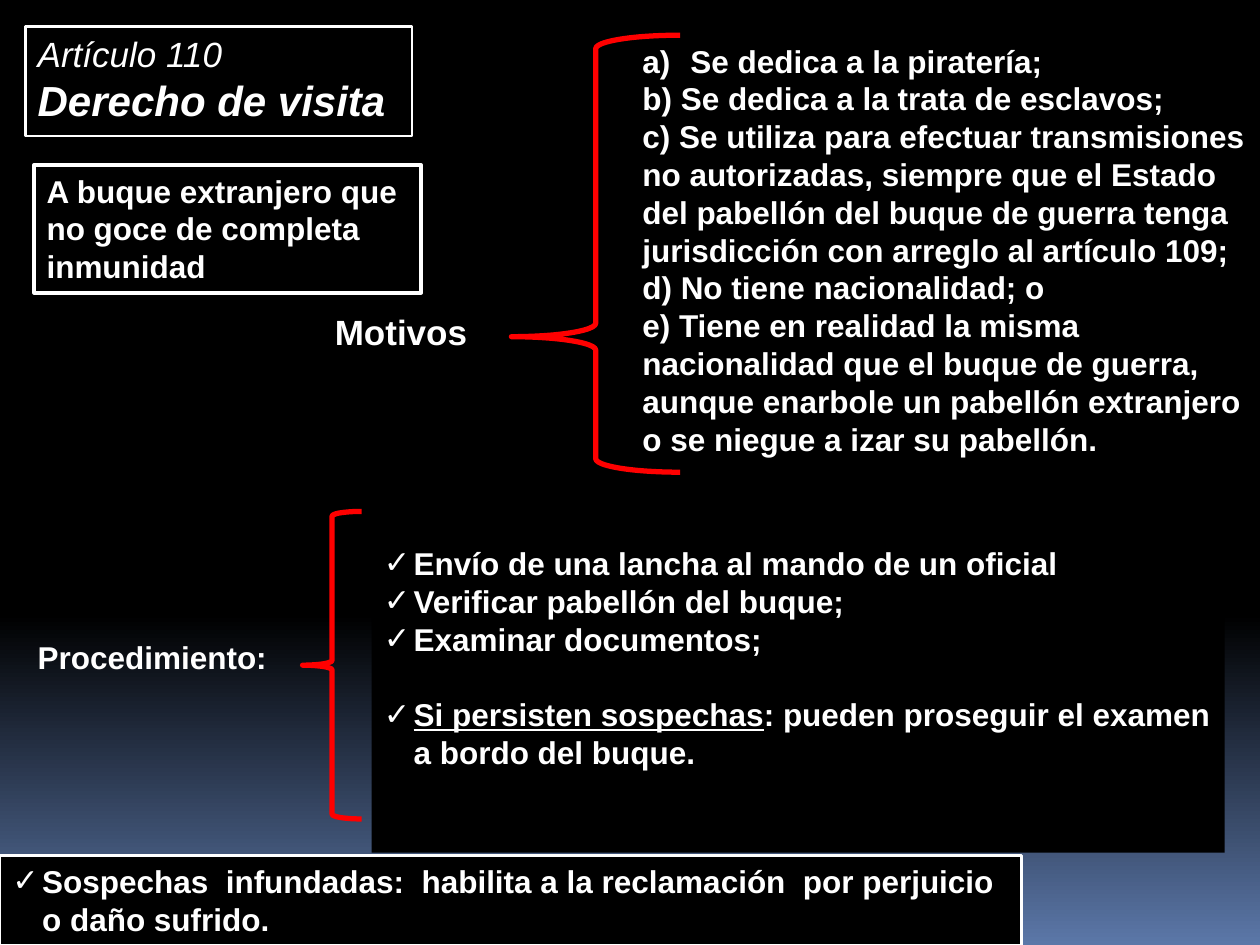
"""Slide on the right of visit, article 110."""
from copy import deepcopy

from lxml.etree import SubElement
from pptx import Presentation
from pptx.dml.color import RGBColor
from pptx.enum.shapes import MSO_SHAPE
from pptx.enum.text import MSO_ANCHOR, PP_ALIGN
from pptx.oxml.ns import qn
from pptx.util import Cm, Pt

BLACK = RGBColor(0x00, 0x00, 0x00)
WHITE = RGBColor(0xFF, 0xFF, 0xFF)
RED = RGBColor(0xFF, 0x00, 0x00)
BLUE = RGBColor(0x5B, 0x77, 0xA8)

FONT = "Arial"
BACKGROUND = [(0, BLACK), (0.65, BLACK), (1, BLUE)]
CHECK = {"tag": "a:buChar", "attribute": ("char", "✓"), "margin": 0.6, "hanging": True}
LETTER = {"tag": "a:buAutoNum", "attribute": ("type", "alphaLcParenR"), "margin": 0.97, "hanging": True}
CONTINUED = {"margin": 0.6}

BOXES = [
    {"at": (0.51, 0.53, 7.8, 2.21), "border": 1.5, "paragraphs": [
        {"runs": [("Artículo 110", {"size": 20, "bold": False, "italic": True})]},
        {"runs": [("Derecho de visita", {"size": 24, "italic": True})]},
    ]},
    {"at": (6.5, 6.12, 6.6, 1.12), "paragraphs": [
        {"runs": [("Motivos", {"size": 20})]},
    ]},
    {"at": (0.51, 12.73, 5.41, 1.02), "paragraphs": [
        {"runs": [("Procedimiento:", {})]},
    ]},
    {"at": (7.49, 9.32, 17.2, 7.87), "fill": BLACK, "top": 1.65, "paragraphs": [
        {"list": CHECK, "runs": [("Envío de una lancha al mando de un oficial", {})]},
        {"list": CHECK, "runs": [("Verificar pabellón del buque;", {})]},
        {"list": CHECK, "runs": [("Examinar documentos;", {})]},
        {"list": CHECK, "before": 21.6, "runs": [
            ("Si persisten sospechas", {"underline": True}),
            (": pueden proseguir el examen", {}),
        ]},
        {"list": CONTINUED, "runs": [("a bordo del buque.", {})]},
    ]},
    {"at": (0, 17.25, 20.6, 1.8), "fill": BLACK, "border": 1.5, "paragraphs": [
        {"list": CHECK, "runs": [(
            "Sospechas  infundadas:  habilita a la reclamación  por perjuicio o daño sufrido.", {})]},
    ]},
    {"at": (12.7, 0.71, 12.7, 9.5), "paragraphs": [
        {"list": LETTER, "runs": [("Se dedica a la piratería;", {})]},
        {"runs": [("b) Se dedica a la trata de esclavos;", {})]},
        {"runs": [(
            "c) Se utiliza para efectuar transmisiones no autorizadas, siempre que el Estado "
            "del pabellón del buque de guerra tenga jurisdicción con arreglo al artículo 109;", {})]},
        {"runs": [("d) No tiene nacionalidad; o", {})]},
        {"runs": [(
            "e) Tiene en realidad la misma nacionalidad que el buque de guerra, aunque enarbole "
            "un pabellón extranjero o se niegue a izar su pabellón.", {})]},
    ]},
    {"at": (0.69, 3.33, 7.8, 2.57), "border": 2.25, "paragraphs": [
        {"runs": [("A buque extranjero que no goce de completa inmunidad", {})]},
    ]},
]
BRACES = [
    ((6.1, 10.31, 1.19, 6.2), 0.08, 0.5),
    ((10.31, 0.71, 3.4, 8.81), 0.08, 0.69),
]


def paint_background(slide):
    fill = slide.background.fill
    fill.gradient()
    fill.gradient_angle = 270
    stop_list = slide.element.find(".//" + qn("a:gsLst"))
    stop_list.append(deepcopy(stop_list[0]))
    for stop, (position, color) in zip(fill.gradient_stops, BACKGROUND):
        stop.position = position
        stop.color.rgb = color


def add_outlined(slide, preset, at, fill, color, width):
    shape = slide.shapes.add_shape(preset, *map(Cm, at))
    shape.shadow.inherit = False
    if fill is None:
        shape.fill.background()
    else:
        shape.fill.solid()
        shape.fill.fore_color.rgb = fill
    if width:
        shape.line.color.rgb = color
        shape.line.width = Pt(width)
    else:
        shape.line.fill.background()
    return shape


def format_list(paragraph, style):
    properties = paragraph._p.get_or_add_pPr()
    margin = Cm(style["margin"])
    properties.set("marL", str(margin))
    properties.set("indent", str(-margin if style.get("hanging") else 0))
    if "tag" in style:
        SubElement(properties, qn("a:buFont"), typeface=FONT)
        SubElement(properties, qn(style["tag"])).set(*style["attribute"])


def write_paragraph(paragraph, content):
    paragraph.alignment = PP_ALIGN.LEFT
    if "before" in content:
        paragraph.space_before = Pt(content["before"])
    if "list" in content:
        format_list(paragraph, content["list"])
    for text, style in content["runs"]:
        run = paragraph.add_run()
        run.text = text
        font = run.font
        font.name = FONT
        font.size = Pt(style.get("size", 18))
        font.bold = style.get("bold", True)
        font.italic = style.get("italic", False)
        font.underline = style.get("underline", False)
        font.color.rgb = WHITE


def add_box(slide, box):
    fill, border = box.get("fill"), box.get("border")
    if fill is not None or border:
        shape = add_outlined(slide, MSO_SHAPE.RECTANGLE, box["at"], fill, WHITE, border)
    else:
        shape = slide.shapes.add_textbox(*map(Cm, box["at"]))
    frame = shape.text_frame
    frame.word_wrap = True
    frame.vertical_anchor = MSO_ANCHOR.TOP
    frame.margin_top = Cm(box.get("top", 0.13))
    for index, content in enumerate(box["paragraphs"]):
        write_paragraph(frame.add_paragraph() if index else frame.paragraphs[0], content)


def main():
    presentation = Presentation()
    presentation.slide_width, presentation.slide_height = Cm(25.4), Cm(19.05)
    slide = presentation.slides.add_slide(presentation.slide_layouts[6])
    paint_background(slide)
    for box in BOXES:
        add_box(slide, box)
    for at, curve, point in BRACES:
        brace = add_outlined(slide, MSO_SHAPE.LEFT_BRACE, at, None, RED, 3)
        brace.adjustments[0] = curve
        brace.adjustments[1] = point
    presentation.save("out.pptx")


if __name__ == "__main__":
    main()
